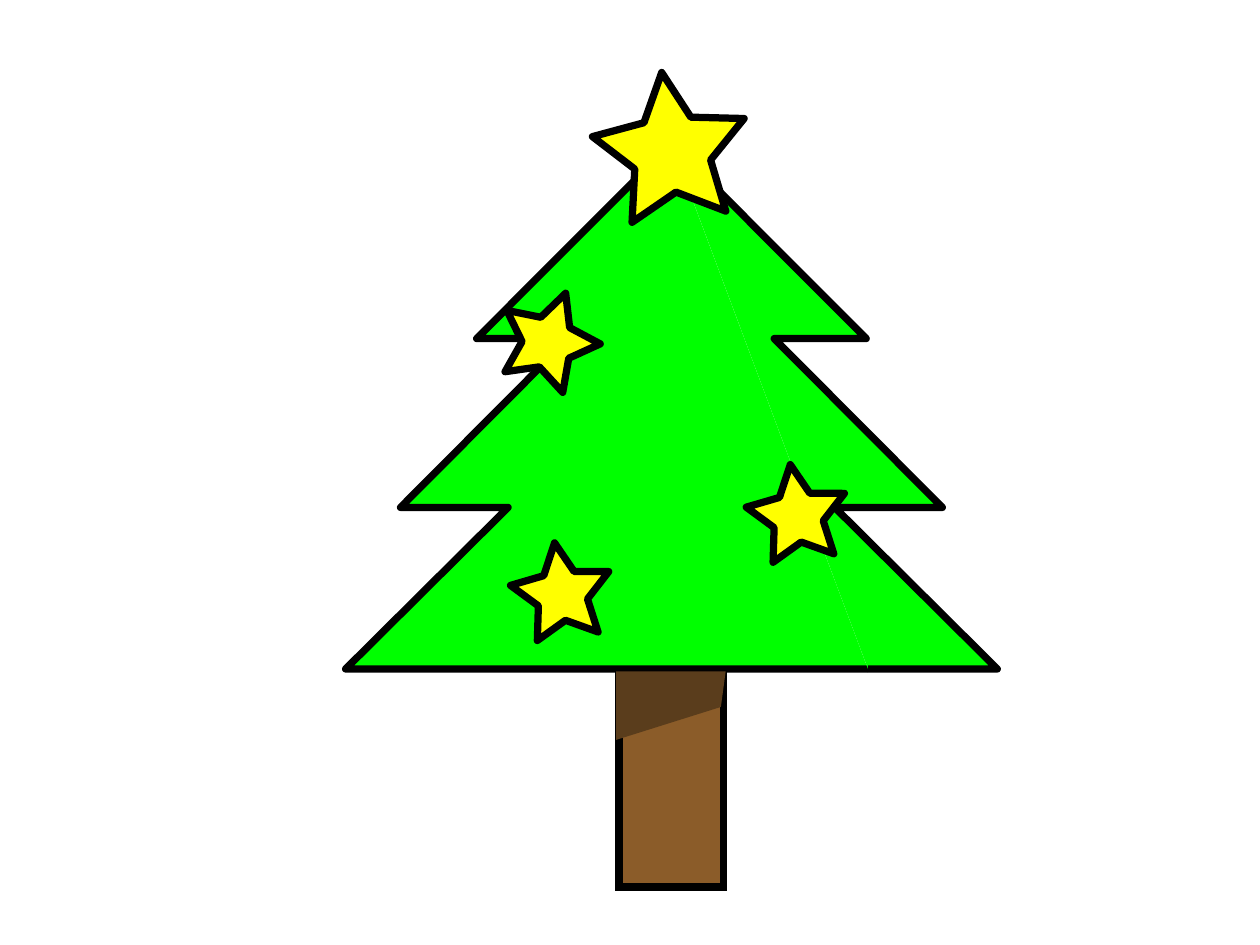
"""Draws a Christmas tree with four stars on one slide."""
from math import cos, radians, sin

from lxml.etree import SubElement
from pptx import Presentation
from pptx.dml.color import RGBColor
from pptx.enum.shapes import MSO_SHAPE as Kind
from pptx.oxml.ns import qn
from pptx.util import Pt


def color(code):
    """Turn a hex string into a colour."""
    return RGBColor.from_string(code)


class Pen:
    """Holds the style and the slide being drawn."""

    ink, width = "000000", 4.13
    leaf, gold, bark, shade = "00FF00", "FFFF00", "8B5C29", "5A3D1C"

    def __init__(self, slide):
        """Keep the slide's shapes."""
        self.shapes = slide.shapes

    def paint(self, shape, fill=None, join=None):
        """Set the fill and, when a join is given, the line."""
        shape.shadow.inherit = False
        if fill:
            shape.fill.solid()
            shape.fill.fore_color.rgb = color(fill)
        else:
            shape.fill.background()
        if join:
            shape.line.color.rgb = color(self.ink)
            shape.line.width = Pt(self.width)
            SubElement(shape.line._get_or_add_ln(), qn("a:" + join))
        else:
            shape.line.fill.background()

    def rect(self, x, y, w, h, fill):
        """Draw an outlined rectangle with sharp corners."""
        box = self.shapes.add_shape(Kind.RECTANGLE, Pt(x), Pt(y), Pt(w), Pt(h))
        self.paint(box, fill, "miter")

    def free(self, spots, fill=None, join=None, close=True):
        """Draw a polygon or an open line through the spots."""
        first, *rest = [(Pt(x), Pt(y)) for x, y in spots]
        path = self.shapes.build_freeform(*first, scale=1.0)
        path.add_line_segments(rest, close=close)
        self.paint(path.convert_to_shape(), fill, join)

    def star(self, x, y, size, tilt):
        """Draw a tilted five-pointed star around its centre."""
        spots = []
        for i in range(10):
            turn = radians(tilt + 36 * i)
            reach = size / 2 if i % 2 else size
            spots.append((x + reach * sin(turn), y - reach * cos(turn)))
        self.free(spots, self.gold, "round")

    def half(self, side, axis, foot, steps):
        """Draw one side of the tree: the fill, then its open outline."""
        edge = [(axis + side * dx, y) for dx, y in steps]
        edge.append((foot, steps[-1][1]))
        self.free(edge, self.leaf)
        self.free(edge, join="round", close=False)


def main():
    """Build and save the slide."""
    deck = Presentation()
    deck.slide_width, deck.slide_height = Pt(720), Pt(540)
    pen = Pen(deck.slides.add_slide(deck.slide_layouts[6]))

    pen.rect(353.7, 348.5, 59.8, 158.4, pen.bark)
    steps = [(0, 82), (111.3, 193.5), (58.7, 193.5), (154.8, 290),
             (93.3, 290), (186.2, 382.3)]
    for side in (-1, 1):
        pen.half(side, 383.7, 496, steps)
    pen.star(383.6, 87, 45.9, -6.8)
    pen.free([(352.1, 383.7), (352.1, 422.8), (412, 404), (414.7, 383.7)],
             pen.shade)
    for x, y, tilt in ((455.8, 295, -8), (313.2, 195.6, 19.7),
                       (321.1, 339.7, -8)):
        pen.star(x, y, 29.8, tilt)

    deck.save("out.pptx")


if __name__ == "__main__":
    main()
